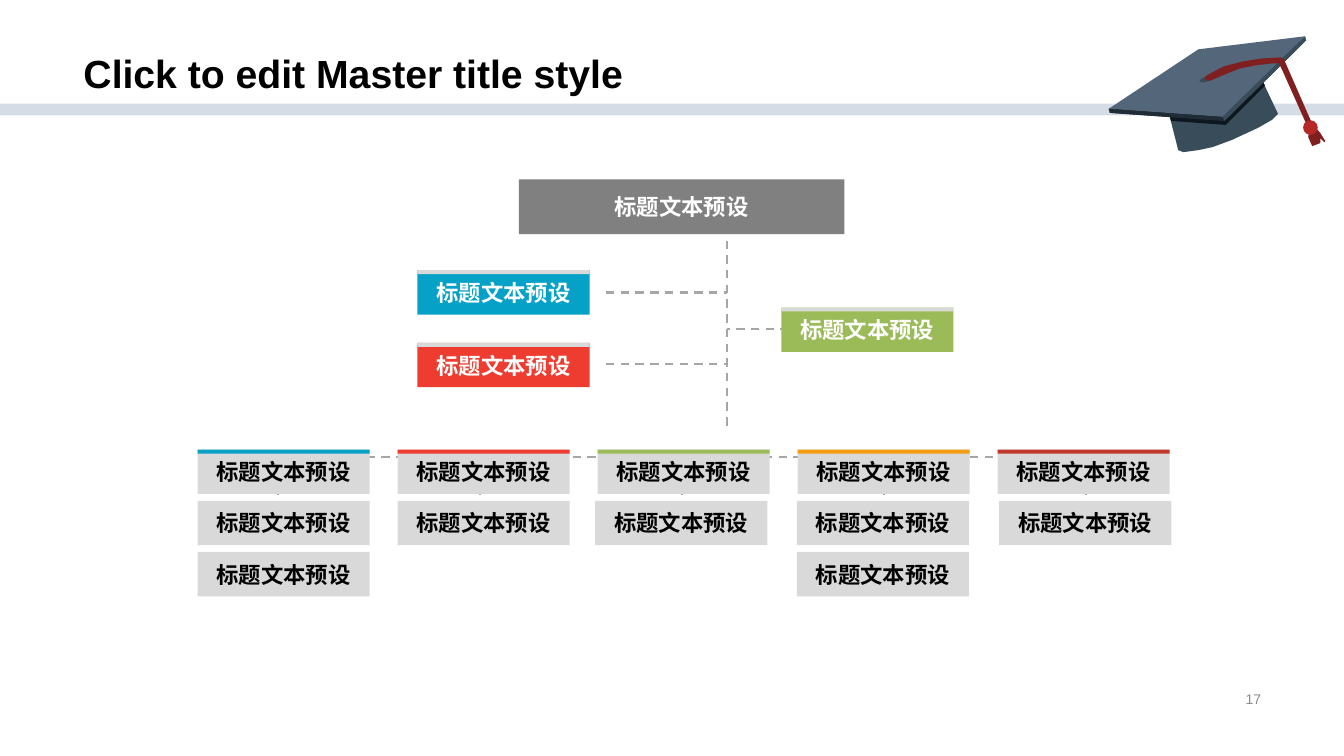
from lxml.etree import SubElement
from pptx import Presentation
from pptx.dml.color import RGBColor
from pptx.enum.dml import MSO_LINE
from pptx.enum.shapes import MSO_CONNECTOR, MSO_SHAPE
from pptx.enum.text import MSO_ANCHOR, PP_ALIGN
from pptx.oxml.ns import qn
from pptx.util import Cm, Pt

HUES = {
    "white": "FFFFFF", "black": "000000", "band": "D6DCE5", "page": "8C8C8C",
    "dash": "A6A6A6", "head": "808080", "pale": "D9D9D9",
    "blue": "06A1C6", "red": "EE3C30", "green": "9BBB59",
    "amber": "F39C12", "brick": "C0392B",
    "slate": "384C59", "ink": "0C171F", "edge": "1F2B35", "top": "54667A",
    "cord": "7F1F1F", "knob": "B52828",
}
LABEL = "标题文本预设"
WIDE, TALL, STRIP = 4.34, 1.12, 0.1  # box size and strip height in cm

# Graduation cap outlines, in hundredths of an inch
CAP = [
    ("cord", [(1314, 141), (1315, 140), (1310, 132), (1305, 126), (1300, 126),
              (1299, 128), (1298, 136), (1302, 145), (1310, 142), (1310, 137)]),
    ("slate", [(1268, 113), (1242, 58), (1154, 90), (1169, 149), (1174, 151),
               (1189, 149), (1203, 146), (1222, 139), (1248, 127), (1262, 119)]),
    ("ink", [(1242, 58), (1154, 91), (1162, 120), (1216, 124), (1255, 85)]),
    ("edge", [(1215, 120), (1101, 112), (1190, 53), (1296, 40)]),
    ("top", [(1213, 116), (1100, 108), (1189, 49), (1295, 36)]),
    ("edge", [(1100, 108), (1101, 112), (1215, 120), (1213, 116)]),
    ("slate", [(1295, 36), (1296, 40), (1215, 120), (1213, 116)]),
    ("slate", [(1208, 74), (1206, 77), (1200, 80), (1194, 82),
               (1190, 81), (1192, 78), (1198, 75), (1204, 73)]),
    ("cord", [(1201, 80), (1215, 74), (1230, 68), (1245, 65), (1261, 63),
              (1269, 63), (1272, 69), (1297, 125), (1300, 127), (1302, 126),
              (1302, 123), (1274, 59), (1271, 57), (1252, 58), (1233, 61),
              (1214, 66), (1197, 75), (1195, 78), (1198, 80)]),
]


class Deck:
    def __init__(self):
        self.prs = Presentation()
        self.prs.slide_width, self.prs.slide_height = Cm(33.87), Cm(19.05)
        self.slide = self.prs.slides.add_slide(self.prs.slide_layouts[5])
        self.shapes = self.slide.shapes
        self.font = "Arial"

    def hue(self, name):
        return RGBColor.from_string(HUES[name])

    def words(self, para, text, size, hue, bold=True):
        run = para.add_run()
        run.text = text
        run.font.name, run.font.size, run.font.bold = self.font, Pt(size), bold
        run.font.color.rgb = self.hue(hue)

    def title(self, text, x, y, w, h):
        shape = self.shapes.title
        shape.left, shape.top, shape.width, shape.height = map(Cm, (x, y, w, h))
        shape.text_frame.vertical_anchor = MSO_ANCHOR.BOTTOM
        para = shape.text_frame.paragraphs[0]
        para.alignment, para.line_spacing = PP_ALIGN.LEFT, 0.9
        self.words(para, text, 28, "black")

    def note(self, text, x, y, w, h):
        frame = self.shapes.add_textbox(*map(Cm, (x, y, w, h))).text_frame
        frame.word_wrap, frame.vertical_anchor = True, MSO_ANCHOR.MIDDLE
        para = frame.paragraphs[0]
        para.alignment = PP_ALIGN.RIGHT
        self.words(para, text, 10, "page", False)

    def paint(self, shape, hue):
        shape.shadow.inherit = False
        shape.fill.solid()
        shape.fill.fore_color.rgb = self.hue(hue)
        shape.line.fill.background()

    def block(self, x, y, w, h, hue, kind=MSO_SHAPE.RECTANGLE):
        shape = self.shapes.add_shape(kind, *map(Cm, (x, y, w, h)))
        self.paint(shape, hue)
        return shape

    def box(self, x, y, hue, ink, strip=None, w=WIDE, h=TALL):
        frame = self.block(x, y, w, h, hue).text_frame
        frame.word_wrap, frame.vertical_anchor = False, MSO_ANCHOR.MIDDLE
        para = frame.paragraphs[0]
        para.alignment = PP_ALIGN.CENTER
        self.words(para, LABEL, 16, ink)
        if strip:
            self.block(x, y, w, STRIP, strip)

    def dash(self, *ends):
        line = self.shapes.add_connector(MSO_CONNECTOR.STRAIGHT, *map(Cm, ends))
        line.line.color.rgb = self.hue("dash")
        line.line.width, line.line.dash_style = Pt(1.5), MSO_LINE.DASH
        SubElement(line._element.spPr, qn("a:effectLst"))

    def form(self, hue, spots):
        pen = self.shapes.build_freeform(*spots[0], scale=Cm(2.54) / 100)
        pen.add_line_segments(spots[1:], close=True)
        self.paint(pen.convert_to_shape(), hue)


def main():
    deck = Deck()

    # Band, cap, title and page number
    deck.block(0, 2.61, 33.87, 0.3, "band")
    for hue, spots in CAP:
        deck.form(hue, spots)
    deck.block(32.84, 3.03, 0.37, 0.37, "knob", MSO_SHAPE.OVAL)
    deck.title("Click to edit Master title style", 1.85, 0, 26.11, 2.57)
    deck.note("17", 24, 17.32, 8.03, 0.58)

    # Dashed lines of the lower tree
    left, step, rail = 7.01, 5.09, 11.51
    deck.dash(left, rail, left + 4 * step, rail)
    for i in range(5):
        deck.dash(left + i * step, rail, left + i * step, 13.28)

    # Trunk and side branches
    trunk = 18.31
    deck.dash(trunk, 5.69, trunk, 10.87)
    for x, y in [(15.27, 7.37), (15.27, 9.17), (21.36, 8.28)]:
        deck.dash(x, y, trunk, y)

    # Head box and side boxes
    deck.box(13.08, 4.52, "head", "white", w=8.2, h=1.38)
    for x, y, hue in [(10.52, 6.81, "blue"), (10.52, 8.64, "red"),
                      (19.69, 7.75, "green")]:
        deck.box(x, y, hue, "white", "pale")

    # Five columns: strip hue, count of boxes, shift of the lower ones
    cols = [("blue", 3, 0), ("red", 2, 0), ("green", 2, -0.06),
            ("amber", 3, -0.02), ("brick", 2, 0.04)]
    for i, (hue, count, shift) in enumerate(cols):
        x = 4.98 + i * 5.04
        deck.box(x, 11.33, "pale", "black", hue)
        for row in range(1, count):
            deck.box(x + shift, 11.33 + row * 1.29, "pale", "black")

    deck.prs.save("out.pptx")


if __name__ == "__main__":
    main()
